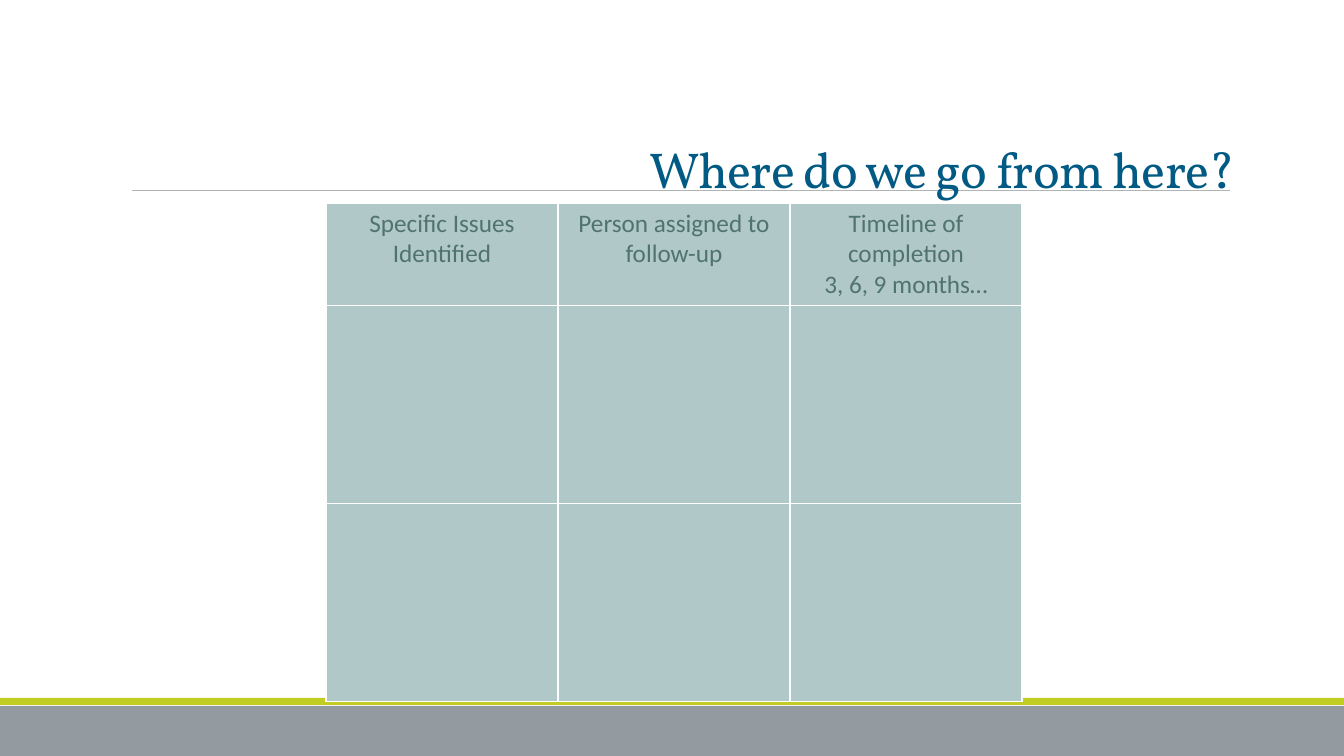
from lxml import etree
from pptx import Presentation, util as u
from pptx.dml.color import RGBColor
from pptx.enum import shapes, text
from pptx.oxml import ns

PX = 914400 / 100.8
WHITE = RGBColor(0xFF, 0xFF, 0xFF)
SLATE = RGBColor(0x93, 0x9B, 0xA1)
LIME = RGBColor(0xC2, 0xCD, 0x23)
RULE = RGBColor(0xB0, 0xB4, 0xB4)
NAVY = RGBColor(0x00, 0x5A, 0x84)
TEAL = RGBColor(0x50, 0x73, 0x72)
PALE_TEAL = RGBColor(0xB0, 0xC8, 0xC7)

HEADERS = [
    "Specific Issues Identified",
    "Person assigned to follow-up",
    "Timeline of completion\n3, 6, 9 months…",
]
ROW_HEIGHTS = [101, 198, 198]
COLUMN_WIDTH = 232


def px(n):
    return u.Emu(round(n * PX))


def add_band(s, top, height, color):
    sp = s.shapes.add_shape(
        shapes.MSO_SHAPE.RECTANGLE, 0, px(top), px(1344), px(height))
    sp.shadow.inherit = False
    sp.fill.solid()
    sp.fill.fore_color.rgb = color
    sp.line.fill.background()


def add_rule(s, left, right, y):
    line = s.shapes.add_connector(
        shapes.MSO_CONNECTOR.STRAIGHT, px(left), px(y), px(right), px(y))
    line.line.color.rgb = RULE
    line.line.width = u.Pt(0.75)
    etree.SubElement(line._element.spPr, ns.qn("a:effectLst"))


def format_title(s, title):
    sp = s.shapes.title
    s.shapes._spTree.append(sp._element)
    sp.left, sp.top, sp.width, sp.height = px(639), px(116), px(813), px(88)
    tf = sp.text_frame
    tf.text = title
    tf.auto_size = text.MSO_AUTO_SIZE.NONE
    tf.vertical_anchor = text.MSO_ANCHOR.BOTTOM
    p = tf.paragraphs[0]
    p.alignment = text.PP_ALIGN.LEFT
    p.line_spacing = 0.85
    r = p.runs[0]
    r.font.name = "Vollkorn"
    r.font.size = u.Pt(36)
    r.font.color.rgb = NAVY
    r.font._element.set("spc", "-50")


def format_cell(cell):
    tcPr = cell._tc.get_or_add_tcPr()
    for side in ("lnL", "lnR", "lnT", "lnB"):
        ln = etree.SubElement(tcPr, ns.qn(f"a:{side}"), w=str(u.Pt(1)))
        fill = etree.SubElement(ln, ns.qn("a:solidFill"))
        etree.SubElement(fill, ns.qn("a:srgbClr"), val=str(WHITE))
    cell.fill.solid()
    cell.fill.fore_color.rgb = PALE_TEAL


def set_header(cell, label):
    cell.text_frame.text = label
    for p in cell.text_frame.paragraphs:
        p.alignment = text.PP_ALIGN.CENTER
        for r in p.runs:
            r.font.name = "Calibri"
            r.font.size = u.Pt(18)
            r.font.bold = False
            r.font.color.rgb = TEAL


def add_plan_table(s, left, top):
    table = s.shapes.add_table(
        len(ROW_HEIGHTS), len(HEADERS), px(left), px(top),
        px(COLUMN_WIDTH * len(HEADERS)), px(sum(ROW_HEIGHTS))).table
    for column in table.columns:
        column.width = px(COLUMN_WIDTH)
    for row, height in zip(table.rows, ROW_HEIGHTS):
        row.height = px(height)
    for cell in table.iter_cells():
        format_cell(cell)
    for cell, label in zip(table.rows[0].cells, HEADERS):
        set_header(cell, label)


def main():
    prs = Presentation()
    prs.slide_width, prs.slide_height = px(1344), px(756)
    s = prs.slides.add_slide(prs.slide_layouts[5])
    add_band(s, 706, 50, SLATE)
    add_band(s, 698, 7, LIME)
    add_rule(s, 132, 1230, 191)
    format_title(s, "Where do we go from here?")
    add_plan_table(s, 326, 203)
    prs.save("out.pptx")


if __name__ == "__main__":
    main()
